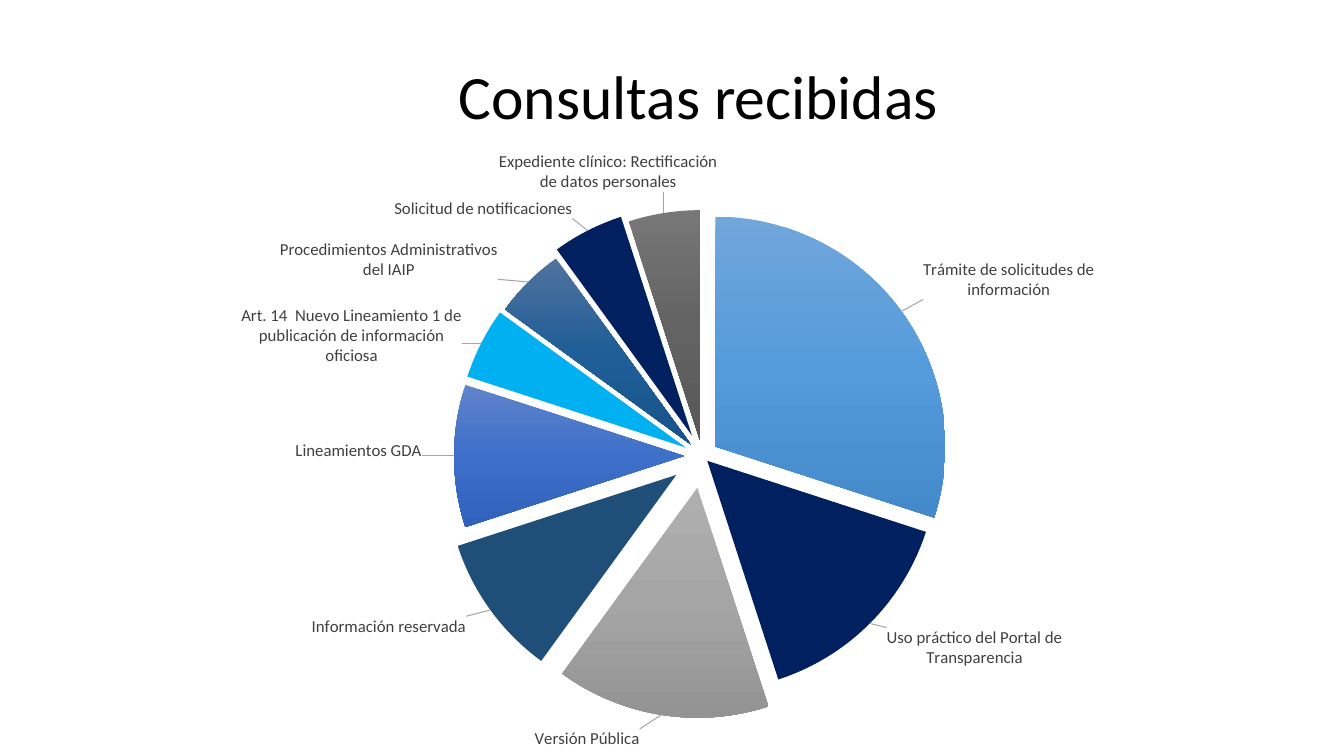
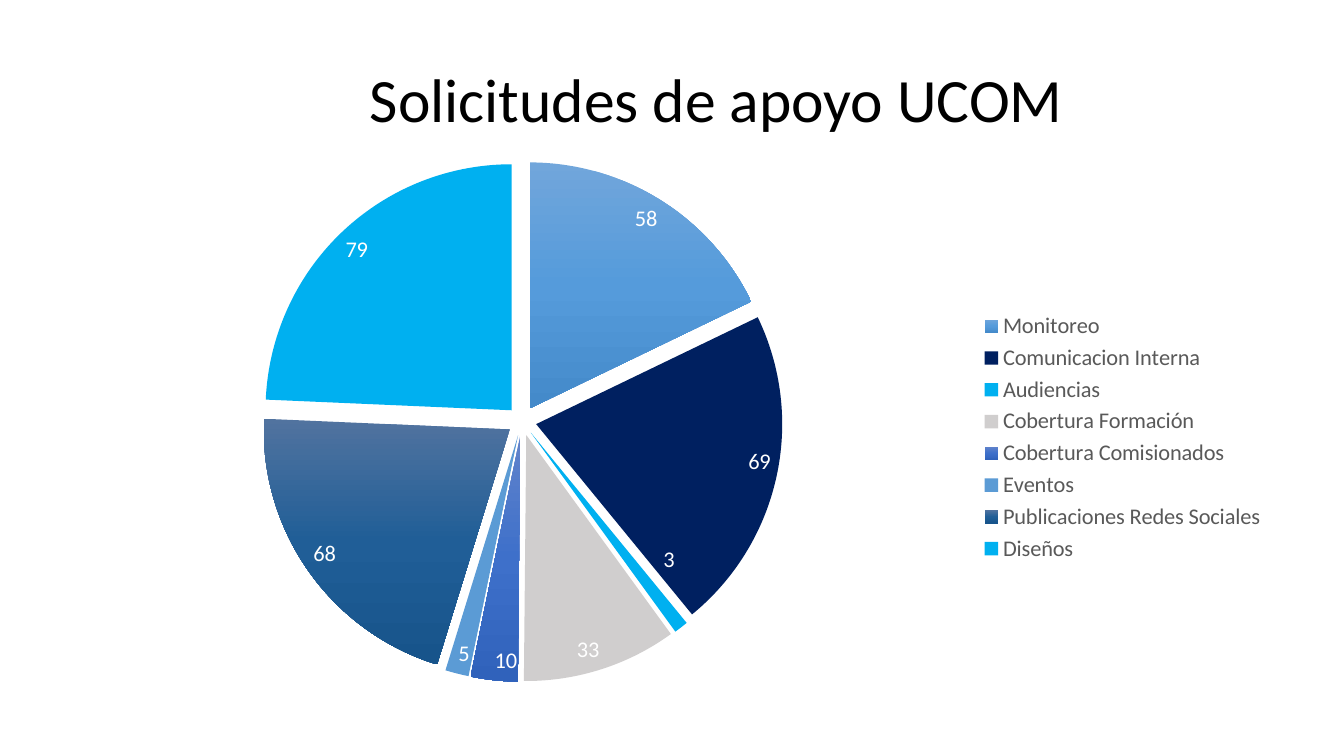
from copy import deepcopy

from pptx import Presentation
from pptx.chart.data import CategoryChartData
from pptx.dml.color import RGBColor
from pptx.enum.chart import XL_CHART_TYPE, XL_LABEL_POSITION, XL_LEGEND_POSITION
from pptx.enum.text import MSO_ANCHOR, PP_ALIGN
from pptx.oxml import parse_xml
from pptx.oxml.ns import nsdecls
from pptx.util import Pt

FONT = "Calibri"
COLORS = {
    "black": "000000", "white": "FFFFFF", "label": "404040", "legend": "595959",
    "leader": "A6A6A6", "navy": "002060", "teal": "1F4E79", "cyan": "00B0F0",
    "silver": "D0CECE", "blue": "5B9BD5",
}
BLENDS = {
    "sky": ("71A6DB", "559BDB", "448ACA"),
    "gray": ("AFAFAF", "A5A5A5", "939393"),
    "royal": ("6183CB", "3E70CA", "3062BB"),
    "steel": ("51739F", "205E97", "17548B"),
    "coal": ("777777", "636363", "585858"),
}
QUERIES = [
    ("Trámite de solicitudes de información", 30, "sky", 7, (12, -6)),
    ("Uso práctico del Portal de Transparencia", 15, "navy", 3, (9, 0)),
    ("Versión Pública", 15, "gray", 14, (-15, 6)),
    ("Información reservada", 10, "teal", 14, (-14, 2)),
    ("Lineamientos GDA", 10, "royal", 8, (-19, -4)),
    ("Art. 14  Nuevo Lineamiento 1 de publicación de información oficiosa",
     5, "cyan", 8, (-10, 18)),
    ("Procedimientos Administrativos del IAIP", 5, "steel", 7, (-19, 1)),
    ("Solicitud de notificaciones", 5, "navy", 10, (-9, -5)),
    ("Expediente clínico: Rectificación de datos personales",
     5, "coal", 7, (39, -11)),
]
SUPPORT = [
    ("Monitoreo", 58, "sky", 6, None),
    ("Comunicacion Interna", 69, "navy", 6, None),
    ("Audiencias", 3, "cyan", 6, (-2, -35)),
    ("Cobertura Formación", 33, "silver", 6, None),
    ("Cobertura Comisionados", 10, "royal", 6, None),
    ("Eventos", 5, "blue", 6, None),
    ("Publicaciones Redes Sociales", 68, "steel", 6, None),
    ("Diseños", 79, "cyan", 6, None),
]


def style(font, size, color):
    """Set the shared face with a size and a colour."""
    font.name, font.size = FONT, Pt(size)
    font.color.rgb = RGBColor.from_string(COLORS[color])


def node(tag, inner="", **attrs):
    """Build one chart element."""
    text = "".join(f' {key}="{val}"' for key, val in attrs.items())
    return parse_xml(f'<c:{tag} {nsdecls("c", "a")}{text}>{inner}</c:{tag}>')


def layout(mode="", **parts):
    """Build a manual layout from fractions of the chart."""
    inner = "".join(f'<c:{key} val="{val:.4f}"/>' for key, val in parts.items())
    return node("layout", f"<c:manualLayout>{mode}{inner}</c:manualLayout>")


def paint(fill, name):
    """Fill a slice with a plain colour or a downward blend."""
    if name in COLORS:
        fill.solid()
        fill.fore_color.rgb = RGBColor.from_string(COLORS[name])
        return
    fill.gradient()
    fill.gradient_angle = 270
    first = fill.gradient_stops[0]._gs
    first.addnext(deepcopy(first))
    for stop, tint, place in zip(fill.gradient_stops, BLENDS[name], (0, 0.5, 1)):
        stop.color.rgb = RGBColor.from_string(tint)
        stop.position = place


def add_title(slide, left, top, text, align):
    """Place the title placeholder."""
    title = slide.shapes.title
    title.left, title.top, title.width, title.height = map(Pt, (left, top, 572, 104))
    frame = title.text_frame
    frame.text = text
    frame.vertical_anchor = MSO_ANCHOR.MIDDLE
    line = frame.paragraphs[0]
    line.alignment, line.line_spacing = align, 0.9
    style(line.font, 44, "black")


def set_labels(labels, names, size, color, spot):
    """Show names or values on the slices, with leader lines."""
    labels.show_category_name, labels.show_value = names, not names
    labels.position = spot
    style(labels.font, size, color)
    root = labels._element
    for old in root.xpath("c:showLeaderLines | c:leaderLines"):
        root.remove(old)
    root.append(node("showLeaderLines", val=1))
    root.append(node("leaderLines", '<c:spPr><a:ln w="9525"><a:solidFill><a:srgbClr val="'
                     + COLORS["leader"] + '"/></a:solidFill></a:ln></c:spPr>'))


def move_label(point, shift, box, names, size, color, spot):
    """Shift one label by points from its usual place."""
    label = point.data_label
    label.position = spot
    style(label.font, size, color)
    root = label._dLbl
    root.xpath("c:showCatName")[0].set("val", str(int(names)))
    root.xpath("c:showVal")[0].set("val", str(int(not names)))
    root.insert(1, layout(x=shift[0] / box[2], y=shift[1] / box[3]))


def add_pie(slide, box, disc, rows, names, look):
    """Draw an exploded pie; disc is its left, top and side in the box."""
    data = CategoryChartData()
    data.categories = [row[0] for row in rows]
    data.add_series("Series 1", [row[1] for row in rows])
    chart = slide.shapes.add_chart(XL_CHART_TYPE.PIE, *map(Pt, box), data).chart
    chart.has_title = chart.has_legend = False
    style(chart.font, look[0], "black")
    plot = chart.plots[0]
    plot.vary_by_categories = True
    area = plot._element.getparent()
    for old in area.xpath("c:layout"):
        area.remove(old)
    mode = '<c:layoutTarget val="inner"/><c:xMode val="edge"/><c:yMode val="edge"/>'
    left, top, side = disc
    wide, high = box[2:]
    area.insert(0, layout(mode, x=left / wide, y=top / high, w=side / wide, h=side / high))
    series = plot.series[0]
    set_labels(series.data_labels, names, *look)
    for index, (_, _, color, burst, shift) in enumerate(rows):
        point = series.points[index]
        paint(point.format.fill, color)
        part = series._element.xpath(f"c:dPt[c:idx/@val={index}]")[0]
        part.insert(1, node("explosion", val=burst))
        if shift:
            move_label(point, shift, box, names, *look)
    return chart


def add_legend(chart):
    """Put the legend at the right."""
    chart.has_legend = True
    chart.legend.position = XL_LEGEND_POSITION.RIGHT
    chart.legend.include_in_layout = False
    style(chart.legend.font, 16, "legend")


def query_slide(slide):
    """Build the slide on queries received."""
    add_title(slide, 213, 19, "Consultas recibidas", PP_ALIGN.CENTER)
    add_pie(slide, (65.5, 103, 829, 437), (272, 58.5, 328.5), QUERIES, True,
            (12, "label", XL_LABEL_POSITION.OUTSIDE_END))


def support_slide(slide):
    """Build the slide on support requests."""
    add_title(slide, 257, 21.5, "Solicitudes de apoyo UCOM", PP_ALIGN.LEFT)
    chart = add_pie(slide, (47.5, 106, 864, 413), (149.5, 19, 351.5), SUPPORT, False,
                    (16, "white", XL_LABEL_POSITION.INSIDE_END))
    add_legend(chart)


def main():
    """Build and save the deck."""
    deck = Presentation()
    deck.slide_width, deck.slide_height = Pt(960), Pt(540)
    for build in (query_slide, support_slide):
        build(deck.slides.add_slide(deck.slide_layouts[5]))
    deck.save("out.pptx")


if __name__ == "__main__":
    main()
